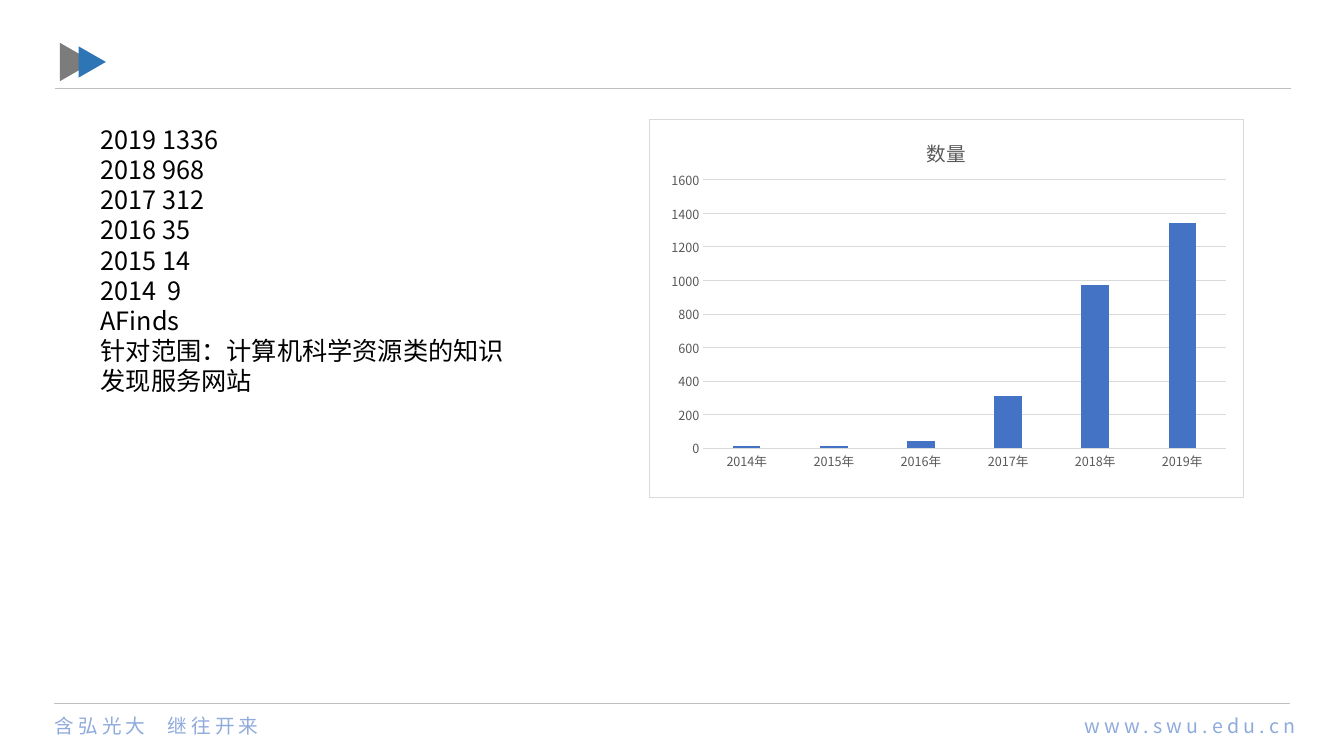
from dataclasses import dataclass

from pptx import Presentation
from pptx.chart.data import CategoryChartData
from pptx.dml.color import RGBColor
from pptx.enum.chart import XL_CHART_TYPE as Chart, XL_TICK_MARK as Tick
from pptx.enum.shapes import MSO_CONNECTOR as Link, MSO_SHAPE as Shape
from pptx.enum.text import MSO_AUTO_SIZE as Fit, PP_ALIGN as Align
from pptx.oxml import parse_xml
from pptx.oxml.ns import nsdecls, qn
from pptx.util import Inches, Pt


@dataclass(frozen=True)
class Theme:
    face: str = "Noto Sans CJK SC"
    ink: str = "000000"
    paper: str = "FFFFFF"
    rule: str = "BFBFBF"
    motto: str = "8FAADC"
    back: str = "7C7C7C"
    front: str = "2E75B6"
    bar: str = "4472C4"
    grid: str = "D9D9D9"
    label: str = "595959"
    body: int = 18
    foot: int = 14
    head: int = 14
    base: int = 10
    tick: int = 9


def color(code):
    return RGBColor.from_string(code)


def box(*sides):
    return [Inches(side) for side in sides]


class Page:
    def __init__(self, slide, theme):
        self.slide = slide
        self.theme = theme

    def style(self, font, size, ink):
        font.name = self.theme.face
        font.size = Pt(size)
        font.color.rgb = color(ink)

    def stroke(self, line, ink, width=0.75):
        line.color.rgb = color(ink)
        line.width = Pt(width)

    def text(self, place, lines, size, ink, align=Align.LEFT, inset=None,
             space=0, tab=None, fit=Fit.NONE):
        """Add a text box; inset is left and right, tab a stop in inches."""
        frame = self.slide.shapes.add_textbox(*box(*place)).text_frame
        frame.word_wrap = True
        frame.auto_size = fit
        if inset:
            frame.margin_left, frame.margin_right = box(*inset)
        for num, line in enumerate(lines):
            para = frame.add_paragraph() if num else frame.paragraphs[0]
            para.alignment = align
            if "\t" in line:
                para._p.get_or_add_pPr().append(parse_xml(
                    f'<a:tabLst {nsdecls("a")}>'
                    f'<a:tab pos="{Inches(tab)}" algn="l"/></a:tabLst>'))
            run = para.add_run()
            run.text = line
            self.style(run.font, size, ink)
            props = run._r.get_or_add_rPr()
            if space:
                props.set("spc", str(space * 100))
            props.find(qn("a:latin")).addnext(parse_xml(
                f'<a:ea {nsdecls("a")} typeface="{self.theme.face}"/>'))

    def rule(self, left, top, width):
        line = self.slide.shapes.add_connector(
            Link.STRAIGHT, *box(left, top, left + width, top))
        self.stroke(line.line, self.theme.rule, 0.5)
        line._element.spPr.append(parse_xml(f'<a:effectLst {nsdecls("a")}/>'))

    def arrows(self, *parts):
        """Group triangles that point right."""
        group = self.slide.shapes.add_group_shape()
        for place, fill in parts:
            shape = group.shapes.add_shape(
                Shape.ISOSCELES_TRIANGLE, *box(*place))
            shape.rotation = 90
            shape.shadow.inherit = False
            shape.fill.solid()
            shape.fill.fore_color.rgb = color(fill)
            shape.line.fill.background()

    def columns(self, place, name, counts, plot):
        """Add a column chart; plot is the inner area as shares of the chart."""
        look = self.theme
        data = CategoryChartData()
        data.categories = [f"{year}年" for year in counts]
        data.add_series(name, counts.values())
        chart = self.slide.shapes.add_chart(
            Chart.COLUMN_CLUSTERED, *box(*place), data).chart
        self.style(chart.font, look.base, look.ink)
        chart.has_legend = False
        chart.has_title = True
        title = chart.chart_title
        title.include_in_layout = False
        title.text_frame.text = name
        run = title.text_frame.paragraphs[0].runs[0]
        self.style(run.font, look.head, look.label)
        run.font.bold = False

        bars = chart.plots[0]
        bars.gap_width = 219
        bars.overlap = -27
        bars.vary_by_categories = False
        fill = bars.series[0].format.fill
        fill.solid()
        fill.fore_color.rgb = color(look.bar)

        cats, vals = chart.category_axis, chart.value_axis
        for axis in (cats, vals):
            axis.major_tick_mark = axis.minor_tick_mark = Tick.NONE
            self.style(axis.tick_labels.font, look.tick, look.label)
        self.stroke(cats.format.line, look.grid)
        vals.format.line.fill.background()
        vals.minimum_scale, vals.maximum_scale, vals.major_unit = 0, 1600, 200
        self.stroke(vals.major_gridlines.format.line, look.grid)
        self.place(chart, plot)
        self.frame(chart)

    def place(self, chart, plot):
        area = chart.element.find(".//" + qn("c:plotArea"))
        for old in area.findall(qn("c:layout")):
            area.remove(old)
        spots = "".join(f'<c:{key} val="{val}"/>' for key, val in zip("xywh", plot))
        area.insert(0, parse_xml(
            f'<c:layout {nsdecls("c")}><c:manualLayout>'
            '<c:layoutTarget val="inner"/><c:xMode val="edge"/>'
            f'<c:yMode val="edge"/>{spots}</c:manualLayout></c:layout>'))

    def frame(self, chart):
        look = self.theme
        chart.element.find(qn("c:chart")).addnext(parse_xml(
            f'<c:spPr {nsdecls("c", "a")}><a:solidFill>'
            f'<a:srgbClr val="{look.paper}"/></a:solidFill>'
            f'<a:ln w="{Pt(0.75)}"><a:solidFill><a:srgbClr val="{look.grid}"/>'
            '</a:solidFill></a:ln></c:spPr>'))


def main():
    deck = Presentation()
    deck.slide_width, deck.slide_height = box(13.33, 7.5)
    look = Theme()
    page = Page(deck.slides.add_slide(deck.slide_layouts[6]), look)

    page.rule(0.55, 0.88, 12.25)
    page.rule(0.54, 6.98, 12.25)
    page.text((0.54, 7.03, 2.32, 0.4), ["含弘光大\t继往开来"], look.foot,
              look.motto, inset=(0, 0.1), space=3, tab=1.12)
    page.text((10.28, 7.03, 2.57, 0.4), ["www.swu.edu.cn"], look.foot,
              look.motto, align=Align.RIGHT, inset=(0, 0), space=3)
    page.arrows(((0.57, 0.45, 0.38, 0.33), look.back),
                ((0.76, 0.48, 0.31, 0.27), look.front))

    page.text((0.9, 1.18, 4.3, 2.83),
              ["2019 1336", "2018 968", "2017 312", "2016 35", "2015 14",
               "2014\t9", "AFinds", "针对范围：计算机科学资源类的知识发现服务网站"],
              look.body, look.ink, tab=0.66, fit=Fit.SHAPE_TO_FIT_TEXT)
    counts = {2014: 10, 2015: 10, 2016: 40, 2017: 310, 2018: 970, 2019: 1340}
    page.columns((6.44, 1.18, 5.9, 3.76), "数量", counts,
                 (0.09, 0.16, 0.88, 0.71))
    deck.save("out.pptx")


if __name__ == "__main__":
    main()
